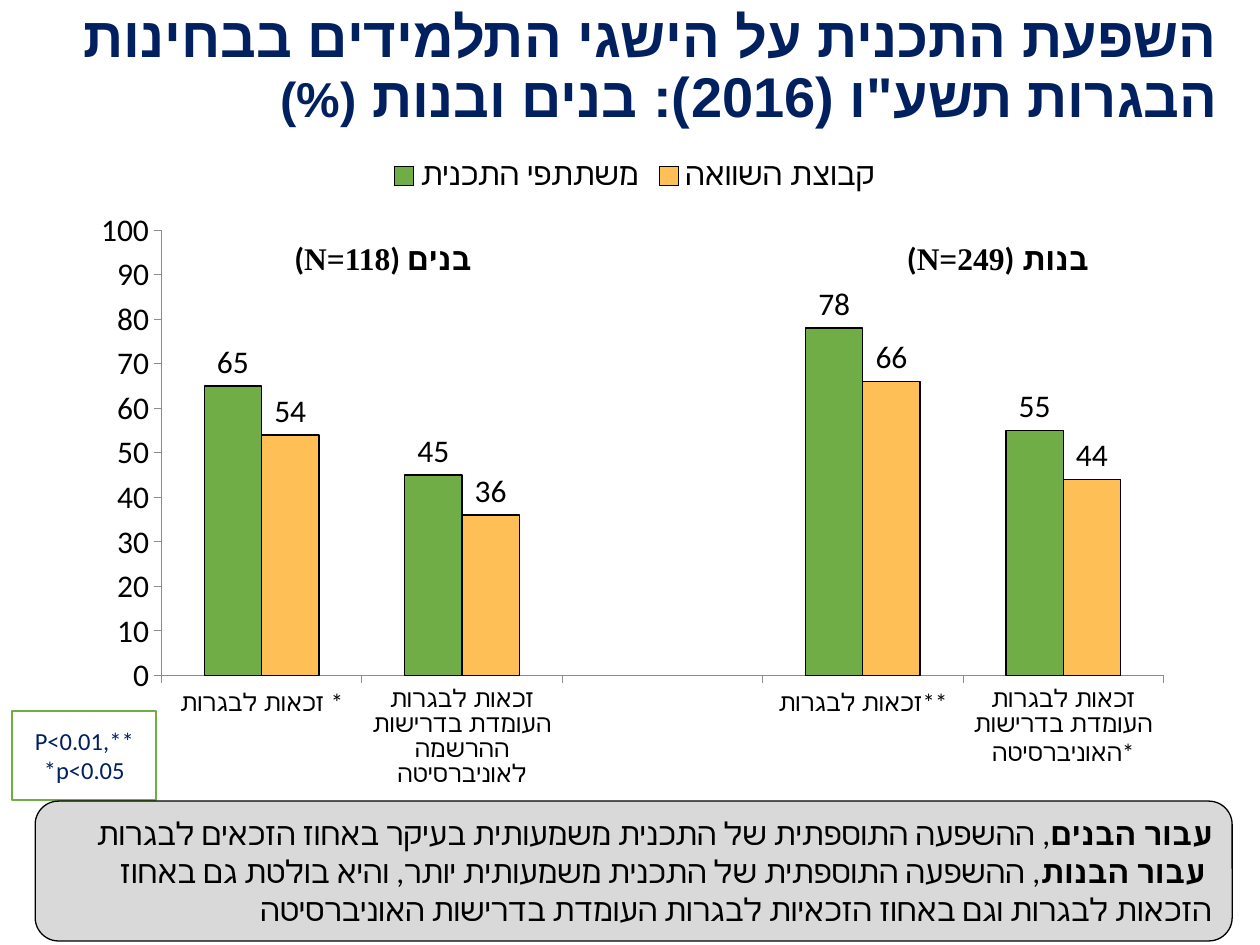
from pptx import Presentation
from pptx.chart.data import CategoryChartData
from pptx.dml.color import RGBColor
from pptx.enum.chart import XL_CHART_TYPE, XL_LABEL_POSITION, XL_LEGEND_POSITION, XL_TICK_MARK
from pptx.enum.shapes import MSO_SHAPE
from pptx.enum.text import MSO_ANCHOR, MSO_AUTO_SIZE, PP_ALIGN
from pptx.oxml import parse_xml
from pptx.oxml.ns import nsdecls
from pptx.util import Cm, Pt

COLUMNS = XL_CHART_TYPE.COLUMN_CLUSTERED
OUTSIDE_END = XL_LABEL_POSITION.OUTSIDE_END
LEGEND_TOP = XL_LEGEND_POSITION.TOP
TICK_OUT = XL_TICK_MARK.OUTSIDE
RECTANGLE, ROUNDED = MSO_SHAPE.RECTANGLE, MSO_SHAPE.ROUNDED_RECTANGLE
MIDDLE, TOP = MSO_ANCHOR.MIDDLE, MSO_ANCHOR.TOP
NO_AUTOFIT = MSO_AUTO_SIZE.NONE
RIGHT, CENTER = PP_ALIGN.RIGHT, PP_ALIGN.CENTER

NAVY = RGBColor(0x00, 0x20, 0x60)
BLACK = RGBColor(0x00, 0x00, 0x00)
WHITE = RGBColor(0xFF, 0xFF, 0xFF)
GREEN = RGBColor(0x70, 0xAD, 0x47)
AMBER = RGBColor(0xFF, 0xBF, 0x57)
AXIS_GRAY = RGBColor(0x8C, 0x8C, 0x8C)
PANEL_GRAY = RGBColor(0xD9, 0xD9, 0xD9)

SERIF, SANS, HEBREW_TITLE = "Times New Roman", "Calibri", "Arial"

CATEGORIES = [
    "זכאות לבגרות *",
    "זכאות לבגרות העומדת בדרישות ההרשמה לאוניברסיטה",
    "",
    "זכאות לבגרות**",
    "זכאות לבגרות העומדת בדרישות האוניברסיטה*",
]
GROUPS = [
    ("משתתפי התכנית", [65, 45, None, 78, 55], GREEN),
    ("קבוצת השוואה", [54, 36, None, 66, 44], AMBER),
]
CAPTIONS = [("בנים (N=118)", 3.56, 4.5), ("בנות (N=249)", 16.13, 4.37)]
FINDINGS = [
    [("עבור הבנים", True),
     (", ההשפעה התוספתית של התכנית משמעותית בעיקר באחוז הזכאים לבגרות", False)],
    [("עבור הבנות", True),
     (", ההשפעה התוספתית של התכנית משמעותית יותר, והיא בולטת גם באחוז ", False)],
    [("הזכאות לבגרות וגם באחוז הזכאיות לבגרות העומדת בדרישות האוניברסיטה", False)],
]


def style_font(font, size, color=BLACK, face=SANS, bold=False):
    """Set the size, colour, face and weight of a font."""
    font.size, font.name, font.bold = Pt(size), face, bold
    font.color.rgb = color


def add_text(paragraph, text, size=18, color=BLACK, face=SERIF, bold=False,
             align=RIGHT, rtl=True, hebrew_face=SANS):
    """Append one formatted run to an aligned paragraph."""
    paragraph.alignment = align
    if rtl:
        paragraph._p.get_or_add_pPr().set("rtl", "1")
    run = paragraph.add_run()
    run.text = text
    style_font(run.font, size, color, face, bold)
    run._r.get_or_add_rPr().append(
        parse_xml(f'<a:cs {nsdecls("a")} typeface="{hebrew_face}"/>'))


def add_panel(slide, box, preset, fill, line, width, anchor):
    """Add a flat, outlined panel and return its text frame."""
    panel = slide.shapes.add_shape(preset, *map(Cm, box))
    panel.shadow.inherit = False
    panel.fill.solid()
    panel.fill.fore_color.rgb = fill
    panel.line.color.rgb = line
    panel.line.width = Pt(width)
    panel.text_frame.vertical_anchor = anchor
    return panel.text_frame


def fill_title(slide, box):
    """Place the slide title in its placeholder."""
    title = slide.shapes.title
    title.left, title.top, title.width, title.height = map(Cm, box)
    frame = title.text_frame
    frame.auto_size = NO_AUTOFIT
    frame.word_wrap = True
    frame.vertical_anchor = MIDDLE
    heading = frame.paragraphs[0]
    heading.line_spacing = 0.9
    for text, size in [
        ("השפעת התכנית על הישגי התלמידים בבחינות הבגרות תשע\"ו (2016): בנים ובנות ", 32),
        ("(%)", 28),
    ]:
        add_text(heading, text, size=size, color=NAVY, bold=True, hebrew_face=HEBREW_TITLE)


def style_axis(axis, size):
    """Format an axis with outward ticks, a gray line and no gridlines."""
    axis.has_major_gridlines = False
    axis.major_tick_mark = TICK_OUT
    axis.format.line.color.rgb = AXIS_GRAY
    axis.format.line.width = Pt(0.5)
    style_font(axis.tick_labels.font, size)


def set_plot_layout(chart, x, y, w, h):
    """Fix the inner plot area as fractions of the chart."""
    plot_area = chart._chartSpace.chart.plotArea
    for layout in plot_area.findall("{*}layout"):
        plot_area.remove(layout)
    plot_area.insert(0, parse_xml(
        f'<c:layout {nsdecls("c")}><c:manualLayout><c:layoutTarget val="inner"/>'
        '<c:xMode val="edge"/><c:yMode val="edge"/>'
        f'<c:x val="{x}"/><c:y val="{y}"/><c:w val="{w}"/><c:h val="{h}"/>'
        '</c:manualLayout></c:layout>'))


def add_results(slide, box):
    """Add the eligibility chart and the captions of its two halves."""
    left, top = box[:2]
    data = CategoryChartData()
    data.categories = CATEGORIES
    for name, values, _ in GROUPS:
        data.add_series(name, values)
    chart = slide.shapes.add_chart(COLUMNS, *map(Cm, box), data).chart
    style_font(chart.font, 18)
    chart.has_title = False
    chart.has_legend = True
    chart.legend.position = LEGEND_TOP
    chart.legend.include_in_layout = False
    style_font(chart.legend.font, 18)
    style_axis(chart.category_axis, 14)
    scale = chart.value_axis
    style_axis(scale, 18)
    scale.minimum_scale, scale.maximum_scale, scale.major_unit = 0, 100, 10
    set_plot_layout(chart, 0.07, 0.13, 0.91, 0.68)

    plot = chart.plots[0]
    plot.gap_width, plot.overlap, plot.vary_by_categories = 150, 0, False
    for series, (_, _, color) in zip(plot.series, GROUPS):
        series.format.fill.solid()
        series.format.fill.fore_color.rgb = color
        series.format.line.color.rgb = BLACK
        series.format.line.width = Pt(0.75)
        labels = series.data_labels
        labels.show_value = True
        labels.position = OUTSIDE_END
        style_font(labels.font, 18)

    for text, offset, width in CAPTIONS:
        caption = slide.shapes.add_textbox(Cm(left + offset), Cm(top + 1.78), Cm(width), Cm(1.02))
        caption.text_frame.word_wrap = True
        add_text(caption.text_frame.paragraphs[0], text, bold=True)


def add_significance(slide, box):
    """Add the significance key."""
    frame = add_panel(slide, box, RECTANGLE, WHITE, GREEN, 1, MIDDLE)
    frame.word_wrap = True
    add_text(frame.paragraphs[0], "**P<0.01, *p<0.05", size=14, color=NAVY,
             face=SANS, align=CENTER)


def add_findings(slide, box):
    """Add the rounded panel with the main findings."""
    frame = add_panel(slide, box, ROUNDED, PANEL_GRAY, BLACK, 0.75, TOP)
    frame.word_wrap = False
    for index, finding in enumerate(FINDINGS):
        paragraph = frame.add_paragraph() if index else frame.paragraphs[0]
        for text, bold in finding:
            add_text(paragraph, text, bold=bold, rtl=False)


def main():
    """Build and save the slide."""
    deck = Presentation()
    deck.slide_width, deck.slide_height = Cm(25.4), Cm(19.05)
    slide = deck.slides.add_slide(deck.slide_layouts[5])
    fill_title(slide, (-0.23, 0.2, 25.04, 2.39))
    add_results(slide, (1.7, 2.92, 22.2, 13.21))
    add_significance(slide, (0.25, 14.33, 2.9, 1.8))
    add_findings(slide, (0.71, 16.15, 24.13, 2.82))
    deck.save("out.pptx")


if __name__ == "__main__":
    main()
